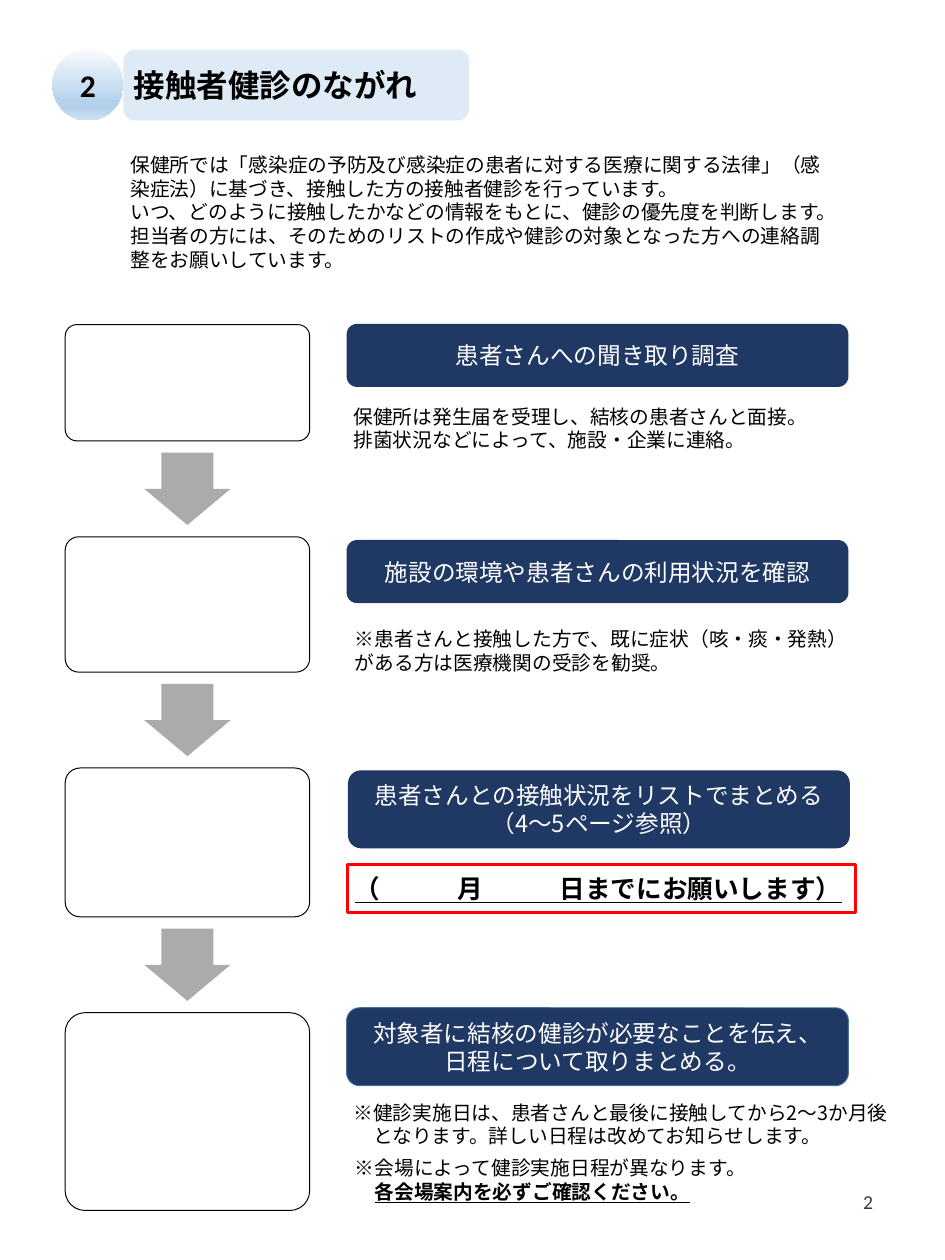
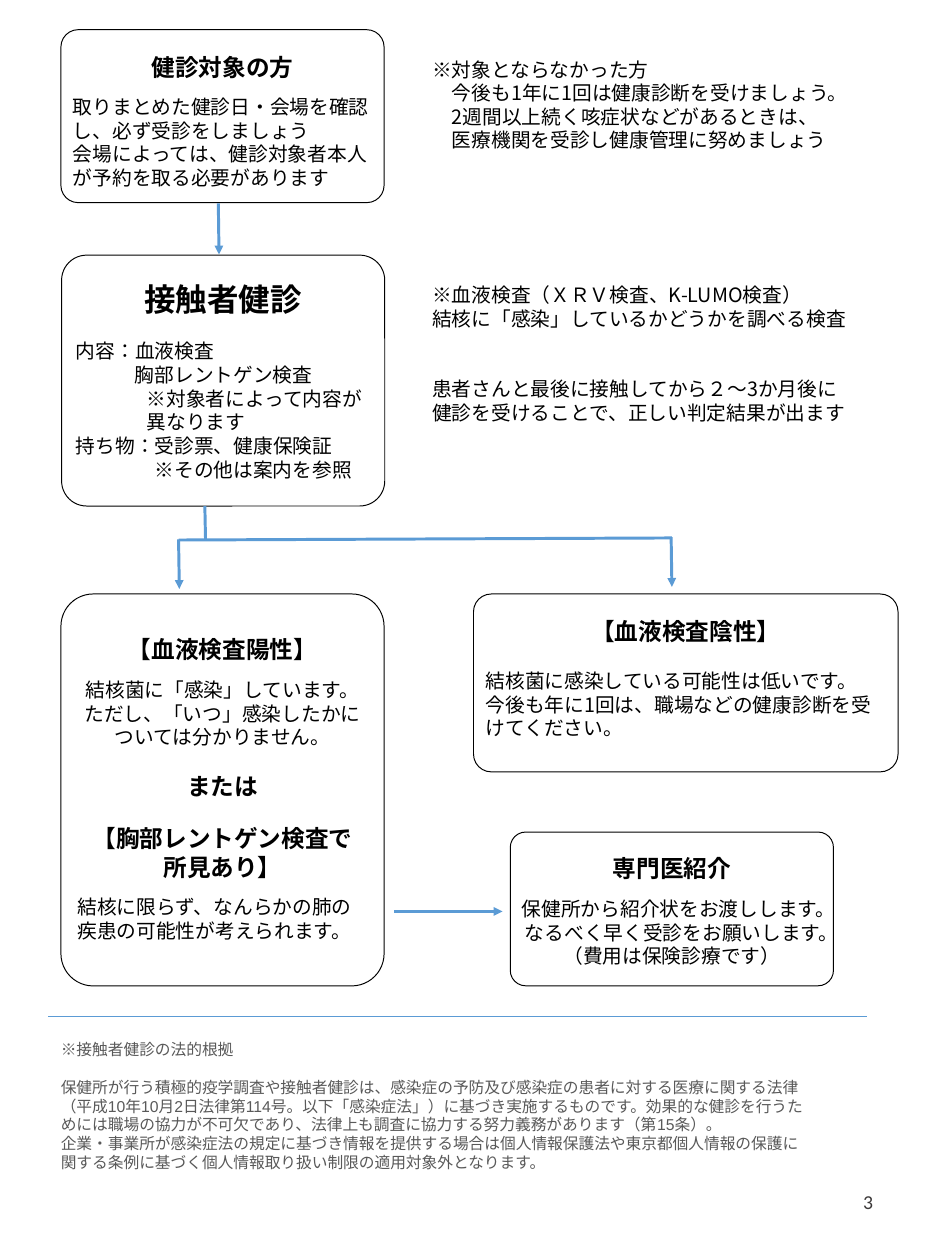
"""Build two pages on the flow of contact screening, on a grid of 96 columns by 128 rows."""
from lxml import etree
from pptx import Presentation
from pptx import util as u
from pptx.dml import color
from pptx.enum import lang, shapes, text
from pptx.oxml import ns

deck = Presentation()
deck.slide_width, deck.slide_height = u.Pt(960), u.Pt(1280)
cell = deck.slide_width / 96

CJK = "Noto Sans CJK JP"
BLACK, WHITE, NAVY, BLUE, GREY = "000000", "FFFFFF", "203864", "5B9BD5", "ABABAB"
LEFT, CENTER, RIGHT = text.PP_ALIGN.LEFT, text.PP_ALIGN.CENTER, text.PP_ALIGN.RIGHT
TOP, MIDDLE = text.MSO_ANCHOR.TOP, text.MSO_ANCHOR.MIDDLE
ROUND = shapes.MSO_SHAPE.ROUNDED_RECTANGLE

BODY = dict(name=CJK, size=20, ink=BLACK)
TITLE = dict(name="Calibri", size=32, bold=True, ink=BLACK)
BANNER = dict(name=CJK, size=24, ink=WHITE, align=CENTER)
DEADLINE = dict(name=CJK, size=26, bold=True, underline=True, ink=BLACK)
HEADING = dict(name="Arial", size=24, bold=True, ink=BLACK, align=CENTER)
LEGAL = dict(name="Arial", asian="Arial", size=16, ink="595959")
PAGE_NUMBER = dict(name="Calibri", size=20, ink="3B3838", align=RIGHT)
OUTLINE = dict(fill=WHITE, line=BLACK, weight=1, corner=0.1)


def rgb(value):
    return color.RGBColor.from_string(value)


def put(slide, kind, place, paragraphs=(), fill=None, line=None, weight=1, corner=None,
        anchor=TOP, wrap=True, top=0.36):
    box = [round(cell * share) for share in place]
    if kind is None:
        item = slide.shapes.add_textbox(*box)
    else:
        item = slide.shapes.add_shape(kind, *box)
        item.shadow.inherit = False
        if fill:
            item.fill.solid()
            item.fill.fore_color.rgb = rgb(fill)
        else:
            item.fill.background()
        if line:
            item.line.color.rgb = rgb(line)
            item.line.width = u.Pt(weight)
        else:
            item.line.fill.background()
        if corner:
            item.adjustments[0] = corner
    frame = item.text_frame
    for key, value in dict(word_wrap=wrap, vertical_anchor=anchor,
                           margin_top=round(cell * top)).items():
        setattr(frame, key, value)
    for index, (words, style, *extra) in enumerate(paragraphs):
        look = style | (extra[0] if extra else {})
        para = frame.paragraphs[0] if index == 0 else frame.add_paragraph()
        layout = dict(alignment=look.get("align", LEFT), line_spacing=u.Pt(look["size"] * 1.2),
                      space_before=u.Pt(look.get("gap", 0)))
        for key, value in layout.items():
            setattr(para, key, value)
        props = para._p.get_or_add_pPr()
        props.set("marL", str(round(cell * look.get("indent", 0))))
        props.set("indent", "0")
        run = para.add_run()
        run.text = words
        letters = dict(name=look["name"], size=u.Pt(look["size"]), bold=look.get("bold", False),
                       underline=look.get("underline", False),
                       language_id=lang.MSO_LANGUAGE_ID.JAPANESE)
        for key, value in letters.items():
            setattr(run.font, key, value)
        run.font.color.rgb = rgb(look["ink"])
        etree.SubElement(run._r.get_or_add_rPr(), ns.qn("a:ea"), typeface=look.get("asian", CJK))
    return item


flow, results = [deck.slides.add_slide(deck.slide_layouts[6]) for _ in range(2)]
for number, page in enumerate((flow, results), 2):
    put(page, None, (67.82, 118.66, 21.6, 6.84), [(str(number), PAGE_NUMBER)], anchor=MIDDLE)

badge = put(flow, shapes.MSO_SHAPE.OVAL, (5.33, 5.04, 7.2, 7.2),
            [("2", TITLE, dict(align=CENTER))], anchor=MIDDLE)
badge.fill.gradient()
badge.fill.gradient_angle = 270
shades = badge._element.spPr.find(".//" + ns.qn("a:gsLst"))
shades.clear()
for share, shade in ((0, "F7FAFD"), (74, "B5D2EC"), (83, "B5D2EC"), (100, "CEE1F2")):
    mark = etree.SubElement(shades, ns.qn("a:gs"), pos=str(share * 1000))
    etree.SubElement(mark, ns.qn("a:srgbClr"), val=shade)

put(flow, ROUND, (12.53, 5.04, 35.14, 7.2), [("接触者健診のながれ", TITLE)],
    fill="DEEBF7", anchor=MIDDLE)
put(flow, None, (12.53, 15.19, 73, 12.82), [
    ("保健所では「感染症の予防及び感染症の患者に対する医療に関する法律」（感染症法）に基づき、"
     "接触した方の接触者健診を行っています。", BODY),
    ("いつ、どのように接触したかなどの情報をもとに、健診の優先度を判断します。"
     "担当者の方には、そのためのリストの作成や健診の対象となった方への連絡調整をお願いしています。", BODY)])

step_top, step_gap, arrow_width, arrow_height = 32.98, 9.74, 8.78, 7.34
for step, height in enumerate((11.81, 13.75, 15.12, 20.09)):
    if step:
        arrow = put(flow, shapes.MSO_SHAPE.DOWN_ARROW,
                    (19.04 - arrow_width / 2, step_top - (step_gap + arrow_height) / 2,
                     arrow_width, arrow_height), fill=GREY)
        arrow.adjustments[0], arrow.adjustments[1] = 0.6, 0.5
    put(flow, ROUND, (6.62, step_top, 24.84, height), **OUTLINE)
    step_top += height + step_gap

for left, upper, height, edge, lines in (
        (35.21, 32.9, 6.41, None, ["患者さんへの聞き取り調査"]),
        (35.21, 54.86, 6.41, None, ["施設の環境や患者さんの利用状況を確認"]),
        (35.35, 78.26, 7.92, None, ["患者さんとの接触状況をリストでまとめる", "（4～5ページ参照）"]),
        (35.21, 102.38, 7.92, "43739E",
         ["対象者に結核の健診が必要なことを伝え、", "日程について取りまとめる。"])):
    put(flow, ROUND, (left, upper, 50.98, height), [(words, BANNER) for words in lines],
        fill=NAVY, line=edge, anchor=MIDDLE)

put(flow, None, (35.21, 40.75, 47.88, 5.54), [
    ("保健所は発生届を受理し、結核の患者さんと面接。", BODY),
    ("排菌状況などによって、施設・企業に連絡。", BODY)], wrap=False)
put(flow, None, (35.35, 63.36, 51.48, 5.54), [
    ("※患者さんと接触した方で、既に症状（咳・痰・発熱）がある方は医療機関の受診を勧奨。", BODY)])
put(flow, shapes.MSO_SHAPE.RECTANGLE, (35.35, 87.84, 51.55, 4.9),
    [("（　　　月　　　日までにお願いします）", DEADLINE)], line="FF0000", weight=3, top=0.86)
put(flow, None, (35.21, 111.46, 59.04, 5.54), [
    ("※健診実施日は、患者さんと最後に接触してから2～3か月後", BODY),
    ("となります。詳しい日程は改めてお知らせします。", BODY, dict(indent=2))])
put(flow, None, (35.35, 117.07, 44.86, 7.99), [
    ("※会場によって健診実施日程が異なります。", BODY),
    ("各会場案内を必ずご確認ください。", BODY, dict(indent=2, bold=True, underline=True))])

put(results, None, (43.2, 5.47, 44.86, 10.44), [
    ("※対象とならなかった方", BODY),
    ("今後も1年に1回は健康診断を受けましょう。", BODY, dict(indent=2)),
    ("2週間以上続く咳症状などがあるときは、", BODY, dict(indent=2)),
    ("医療機関を受診し健康管理に努めましょう", BODY, dict(indent=2))], wrap=False)
put(results, None, (43.2, 28.37, 47.38, 15.26), [
    ("※血液検査（ＸＲＶ検査、K-LUMO検査）", BODY),
    ("結核に「感染」しているかどうかを調べる検査", BODY),
    ("患者さんと最後に接触してから２～3か月後に", BODY, dict(gap=48)),
    ("健診を受けることで、正しい判定結果が出ます", BODY)])

small, large = dict(gap=14.4), dict(gap=24)
middle = dict(align=CENTER)
for place, top, paragraphs in (
        ((6.19, 3.02, 32.83, 17.57), 1.8, [
            ("健診対象の方", HEADING),
            ("取りまとめた健診日・会場を確認し、必ず受診をしましょう", BODY, small),
            ("会場によっては、健診対象者本人が予約を取る必要があります", BODY)]),
        ((6.26, 25.92, 32.83, 25.49), 1.8, [
            ("接触者健診", HEADING, dict(size=32)),
            ("内容：血液検査", BODY, dict(gap=21.6)),
            ("胸部レントゲン検査", BODY, dict(indent=6)),
            ("※対象者によって内容が異なります", BODY, dict(indent=7.2)),
            ("持ち物：受診票、健康保険証", BODY),
            ("※その他は案内を参照", BODY, dict(indent=8))]),
        ((6.19, 60.34, 32.83, 39.82), 3.24, [
            ("【血液検査陽性】", HEADING),
            ("結核菌に「感染」しています。", BODY, middle | small),
            ("ただし、「いつ」感染したかについては分かりません。", BODY, middle),
            ("または", HEADING, large),
            ("【胸部レントゲン検査で", HEADING, large),
            ("所見あり】", HEADING),
            ("結核に限らず、なんらかの肺の疾患の可能性が考えられます。", BODY, small)]),
        ((48.1, 60.34, 43.13, 18.07), 1.8, [
            ("【血液検査陰性】", HEADING),
            ("結核菌に感染している可能性は低いです。", BODY, large),
            ("今後も年に1回は、職場などの健康診断を受けてください。", BODY)]),
        ((51.84, 84.53, 32.83, 15.62), 1.8, [
            ("専門医紹介", HEADING),
            ("保健所から紹介状をお渡しします。", BODY, small),
            ("なるべく早く受診をお願いします。", BODY, middle),
            ("（費用は保険診療です）", BODY, middle)])):
    put(results, ROUND, place, paragraphs, top=top, **OUTLINE)

for ends, weight, pointed in (
        ((22.18, 20.66, 22.25, 25.85), 3, True),
        ((20.81, 50.04, 20.88, 54.86), 3, False),
        ((18.14, 54.86, 68.26, 54.65), 3, False),
        ((18.14, 54.79, 18.22, 59.83), 3, True),
        ((68.18, 54.58, 68.26, 59.62), 3, True),
        ((40.03, 92.59, 51.05, 92.59), 3, True),
        ((4.9, 103.25, 88.06, 103.25), 0.5, False)):
    if ends[1] == 50.04:
        ends = (20.81, 51.41, *ends[2:])
    link = results.shapes.add_connector(shapes.MSO_CONNECTOR.STRAIGHT,
                                        *[round(cell * end) for end in ends])
    link.line.color.rgb = rgb(BLUE)
    link.line.width = u.Pt(weight)
    if pointed:
        etree.SubElement(link.line._get_or_add_ln(), ns.qn("a:tailEnd"), type="triangle")
    etree.SubElement(link._element.spPr, ns.qn("a:effectLst"))

put(results, None, (5.47, 105.26, 77.04, 14.33), [
    ("※接触者健診の法的根拠", LEGAL),
    ("保健所が行う積極的疫学調査や接触者健診は、感染症の予防及び感染症の患者に対する医療に関する法律"
     "（平成10年10月2日法律第114号。以下「感染症法」）に基づき実施するものです。"
     "効果的な健診を行うためには職場の協力が不可欠であり、"
     "法律上も調査に協力する努力義務があります（第15条）。", LEGAL, dict(gap=19.2)),
    ("企業・事業所が感染症法の規定に基づき情報を提供する場合は個人情報保護法や"
     "東京都個人情報の保護に関する条例に基づく個人情報取り扱い制限の適用対象外となります。", LEGAL)])

deck.save("out.pptx")
